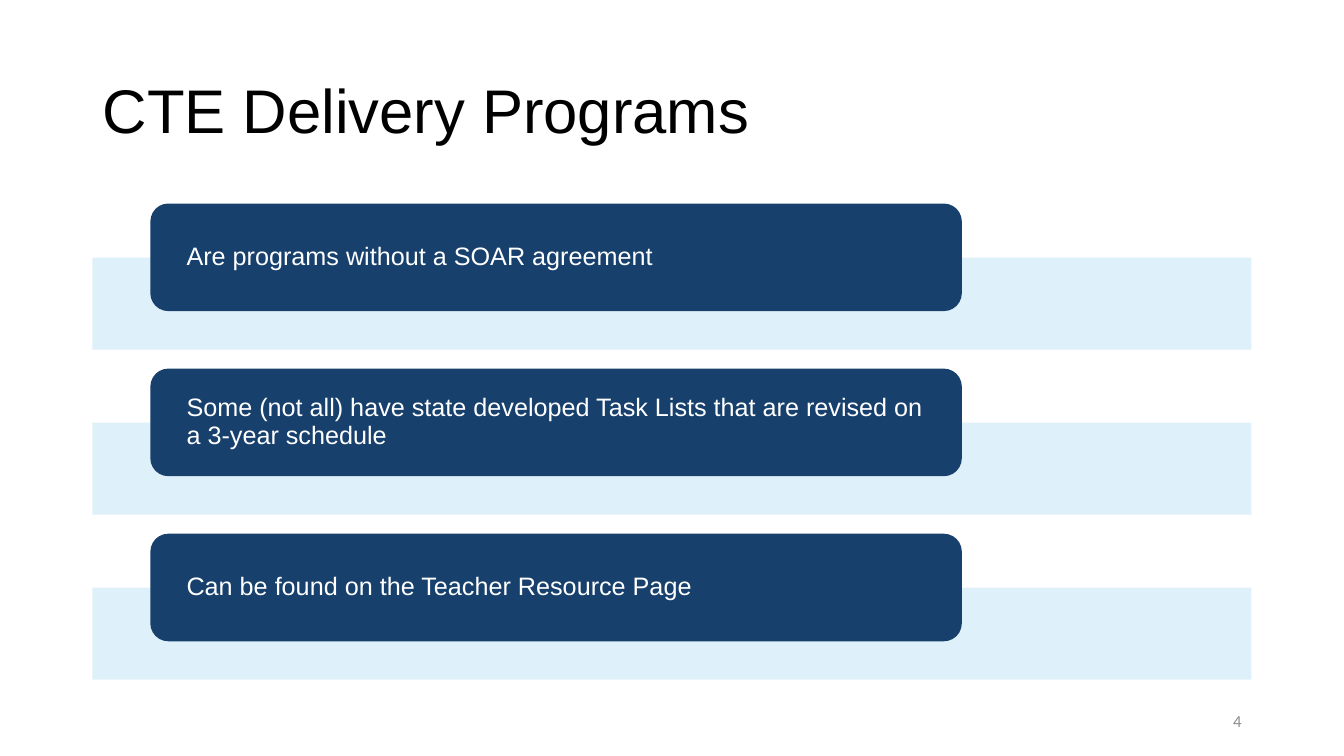
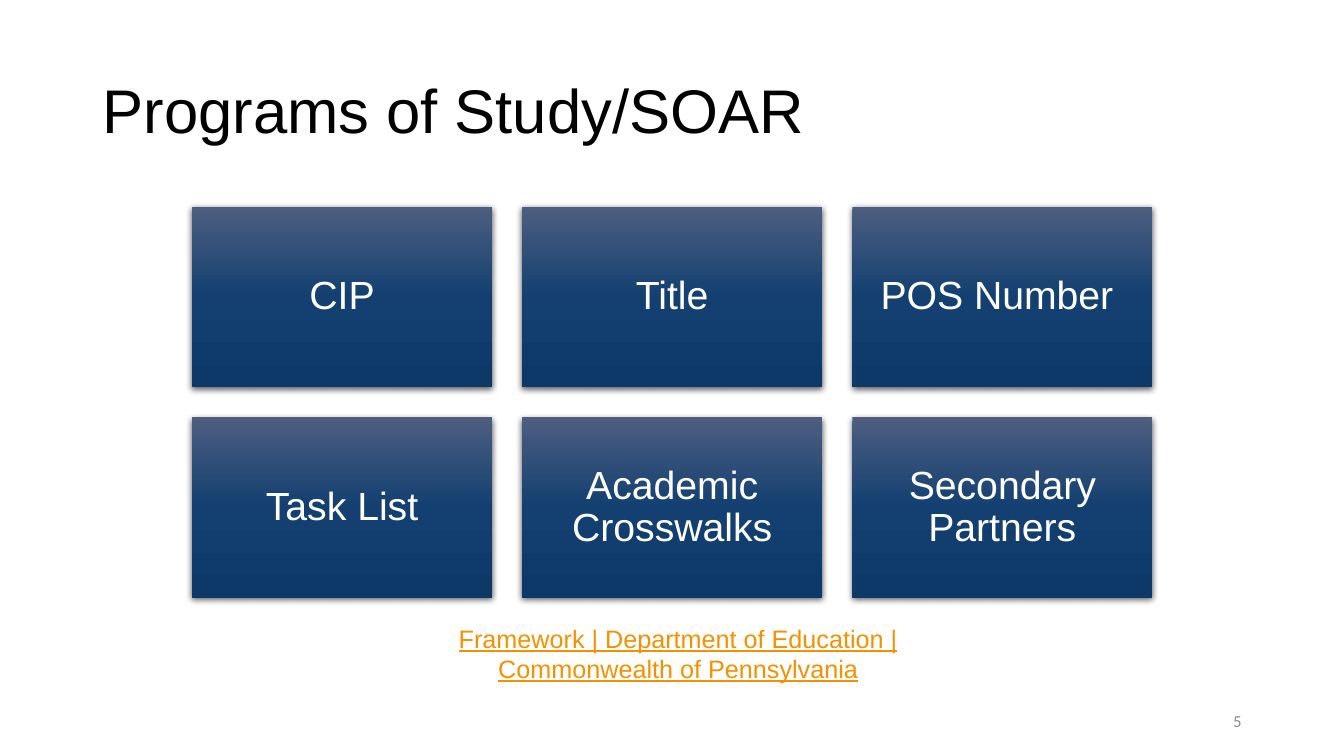
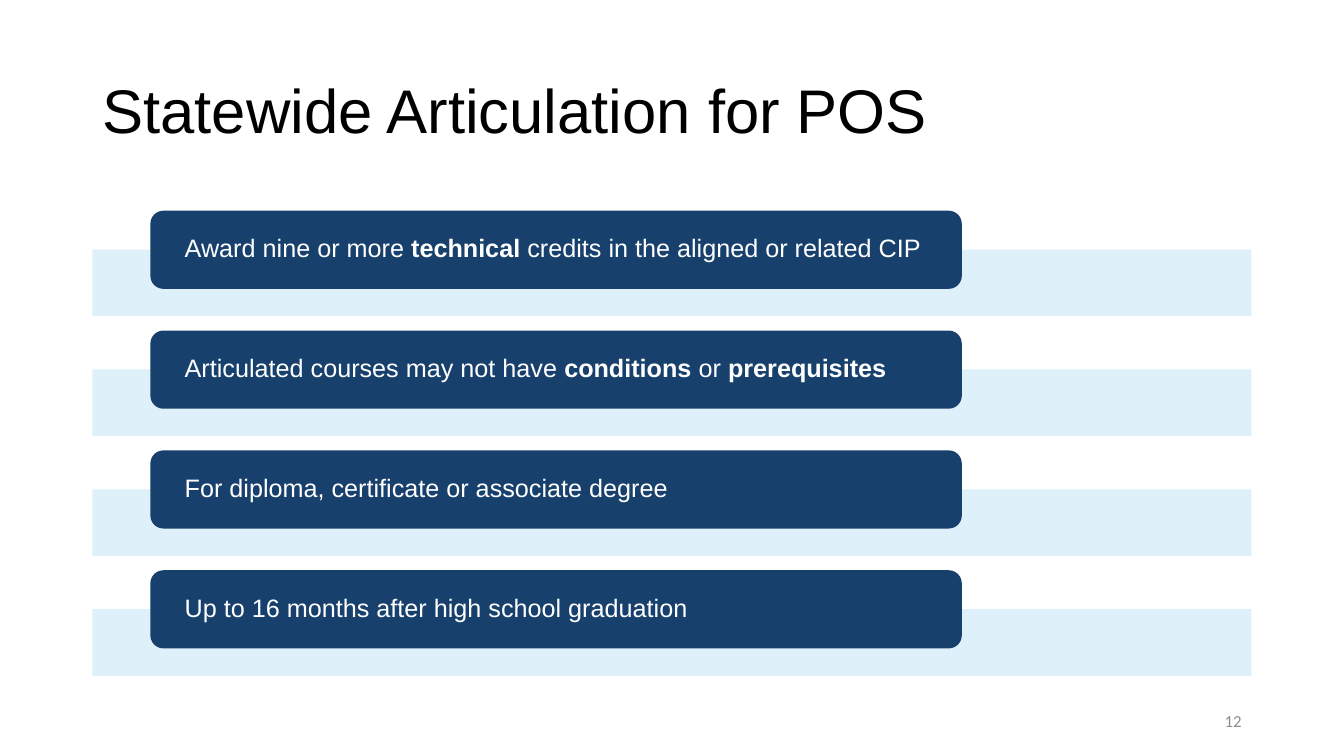
"""Build three slides on career and technical education programs."""

import dataclasses
import typing

import pptx
import pptx.dml.color
import pptx.enum.shapes
import pptx.enum.text
import pptx.oxml
import pptx.oxml.ns
import pptx.presentation
import pptx.shapes.autoshape
import pptx.slide
import pptx.text.text
import pptx.util

Cm = pptx.util.Cm
RGBColor = pptx.dml.color.RGBColor
Align = pptx.enum.text.PP_ALIGN
Anchor = pptx.enum.text.MSO_ANCHOR
ShapeKind = pptx.enum.shapes.MSO_SHAPE

BLACK = RGBColor(0x00, 0x00, 0x00)
WHITE = RGBColor(0xFF, 0xFF, 0xFF)
NAVY = RGBColor(0x17, 0x40, 0x6D)
PALE_BLUE = RGBColor(0xDB, 0xEF, 0xF9)
ORANGE = RGBColor(0xF4, 0x91, 0x00)
GRAY = RGBColor(0x8C, 0x8C, 0x8C)
TILE_STOPS = (
    (0, RGBColor(0x4D, 0x5E, 0x80)),
    (50, RGBColor(0x13, 0x40, 0x71)),
    (100, RGBColor(0x0D, 0x39, 0x69)),
)

CONTENT_LEFT = Cm(2.33)
CONTENT_WIDTH = Cm(29.21)
LABEL_LEFT = Cm(3.79)
LABEL_WIDTH = Cm(20.45)
TITLE_ONLY_LAYOUT = 5


class TextRun(typing.NamedTuple):
    """A piece of text with its weight."""

    text: str
    bold: bool = False


@dataclasses.dataclass(frozen=True)
class TextStyle:
    """Character and paragraph format of a text."""

    size: int
    color: RGBColor
    font: str = "Arial"
    align: Align = Align.LEFT
    line_spacing: float = 0.9
    underline: bool = False


@dataclasses.dataclass(frozen=True)
class BandLayout:
    """Vertical measures of a stack of labelled bands."""

    band_top: Cm
    band_height: Cm
    label_top: Cm
    label_height: Cm
    pitch: Cm
    inset: Cm


@dataclasses.dataclass(frozen=True)
class TileGrid:
    """Measures of a grid of equal tiles."""

    left: Cm
    top: Cm
    width: Cm
    height: Cm
    gap: Cm
    columns: int


TITLE_STYLE = TextStyle(44, BLACK)
LABEL_STYLE = TextStyle(18, WHITE)
TILE_STYLE = TextStyle(28, WHITE, align=Align.CENTER)
SOURCE_STYLE = TextStyle(18, ORANGE, align=Align.CENTER, line_spacing=1.0, underline=True)
NUMBER_STYLE = TextStyle(12, GRAY, font="Calibri", align=Align.RIGHT, line_spacing=1.0)

THREE_BANDS = BandLayout(Cm(6.49), Cm(2.32), Cm(5.13), Cm(2.71), Cm(4.16), Cm(0.78))
FOUR_BANDS = BandLayout(Cm(6.29), Cm(1.68), Cm(5.31), Cm(1.97), Cm(3.02), Cm(0.77))
TOPIC_GRID = TileGrid(Cm(4.84), Cm(5.22), Cm(7.56), Cm(4.54), Cm(0.76), 3)

DELIVERY_POINTS = (
    (TextRun("Are programs without a SOAR agreement"),),
    (TextRun("Some (not all) have state developed Task Lists that are revised on a 3-year schedule"),),
    (TextRun("Can be found on the Teacher Resource Page "),),
)
TOPICS = (
    "CIP",
    "Title",
    "POS Number ",
    "Task List",
    "Academic Crosswalks",
    "Secondary Partners",
)
ARTICULATION_POINTS = (
    (
        TextRun("Award nine or more "),
        TextRun("technical", True),
        TextRun(" credits in the aligned or related CIP"),
    ),
    (
        TextRun("Articulated courses may not have "),
        TextRun("conditions", True),
        TextRun(" or "),
        TextRun("prerequisites", True),
    ),
    (TextRun("For diploma, certificate or associate degree"),),
    (TextRun("Up to 16 months after high school graduation"),),
)


def write_text(
    frame: pptx.text.text.TextFrame,
    runs: typing.Iterable[TextRun],
    style: TextStyle,
    anchor: Anchor = Anchor.MIDDLE,
) -> None:
    """Write runs into the first paragraph of a text frame."""
    frame.word_wrap = True
    frame.auto_size = pptx.enum.text.MSO_AUTO_SIZE.NONE
    frame.vertical_anchor = anchor
    paragraph = frame.paragraphs[0]
    paragraph.alignment = style.align
    paragraph.line_spacing = style.line_spacing
    for text_run in runs:
        run = paragraph.add_run()
        run.text = text_run.text
        run.font.name = style.font
        run.font.size = pptx.util.Pt(style.size)
        run.font.bold = text_run.bold
        run.font.underline = style.underline
        run.font.color.rgb = style.color


def set_margins(frame: pptx.text.text.TextFrame, horizontal: Cm, vertical: Cm) -> None:
    """Set symmetric margins on a text frame."""
    frame.margin_left = frame.margin_right = horizontal
    frame.margin_top = frame.margin_bottom = vertical


def add_plain_shape(
    slide: pptx.slide.Slide, kind: ShapeKind, left: int, top: int, width: int, height: int
) -> pptx.shapes.autoshape.Shape:
    """Add a preset shape without line and shadow."""
    shape = slide.shapes.add_shape(kind, left, top, width, height)
    shape.shadow.inherit = False
    shape.line.fill.background()
    return shape


def add_titled_slide(
    presentation: pptx.presentation.Presentation, title: str, number: int
) -> pptx.slide.Slide:
    """Add a slide with its title and number."""
    slide = presentation.slides.add_slide(presentation.slide_layouts[TITLE_ONLY_LAYOUT])
    heading = slide.shapes.title
    heading.left, heading.top = CONTENT_LEFT, Cm(1.01)
    heading.width, heading.height = CONTENT_WIDTH, Cm(3.68)
    write_text(heading.text_frame, [TextRun(title)], TITLE_STYLE)
    number_box = slide.shapes.add_textbox(Cm(23.92), Cm(17.65), Cm(7.62), Cm(1.02))
    write_text(number_box.text_frame, [TextRun(str(number))], NUMBER_STYLE)
    return slide


def add_bands(
    slide: pptx.slide.Slide,
    layout: BandLayout,
    points: typing.Sequence[typing.Sequence[TextRun]],
) -> None:
    """Stack pale bands, each with a rounded label over it."""
    for index, runs in enumerate(points):
        offset = index * layout.pitch
        band = add_plain_shape(
            slide, ShapeKind.RECTANGLE,
            CONTENT_LEFT, layout.band_top + offset, CONTENT_WIDTH, layout.band_height,
        )
        band.fill.solid()
        band.fill.fore_color.rgb = PALE_BLUE
        color = band.element.spPr.find(".//" + pptx.oxml.ns.qn("a:srgbClr"))
        color.append(pptx.oxml.parse_xml(f'<a:alpha {pptx.oxml.ns.nsdecls("a")} val="90000"/>'))
        label = add_plain_shape(
            slide, ShapeKind.ROUNDED_RECTANGLE,
            LABEL_LEFT, layout.label_top + offset, LABEL_WIDTH, layout.label_height,
        )
        label.fill.solid()
        label.fill.fore_color.rgb = NAVY
        set_margins(label.text_frame, layout.inset, Cm(0))
        write_text(label.text_frame, runs, LABEL_STYLE)


def shade_tile(tile: pptx.shapes.autoshape.Shape) -> None:
    """Give a tile its vertical gradient and soft shadow."""
    namespace = pptx.oxml.ns.nsdecls("a")
    stops = "".join(
        f'<a:gs pos="{position * 1000}"><a:srgbClr val="{color}"/></a:gs>'
        for position, color in TILE_STOPS
    )
    gradient = pptx.oxml.parse_xml(
        f'<a:gradFill {namespace} rotWithShape="1"><a:gsLst>{stops}</a:gsLst>'
        '<a:lin ang="5400000" scaled="0"/></a:gradFill>'
    )
    shadow = pptx.oxml.parse_xml(
        f'<a:outerShdw {namespace} blurRad="57150" dist="19050" dir="5400000" '
        'algn="ctr" rotWithShape="0"><a:srgbClr val="000000">'
        '<a:alpha val="63000"/></a:srgbClr></a:outerShdw>'
    )
    properties = tile.element.spPr
    properties.find(pptx.oxml.ns.qn("a:prstGeom")).addnext(gradient)
    properties.find(pptx.oxml.ns.qn("a:effectLst")).append(shadow)


def add_tiles(slide: pptx.slide.Slide, grid: TileGrid, names: typing.Sequence[str]) -> None:
    """Lay out named tiles row by row."""
    for index, name in enumerate(names):
        row, column = divmod(index, grid.columns)
        tile = add_plain_shape(
            slide, ShapeKind.RECTANGLE,
            grid.left + column * (grid.width + grid.gap),
            grid.top + row * (grid.height + grid.gap),
            grid.width, grid.height,
        )
        shade_tile(tile)
        set_margins(tile.text_frame, Cm(0.3), Cm(0.3))
        write_text(tile.text_frame, [TextRun(name)], TILE_STYLE)


def add_source(slide: pptx.slide.Slide, text: str) -> None:
    """Add the underlined source line below the tiles."""
    frame = slide.shapes.add_textbox(Cm(8.86), Cm(15.57), Cm(16.31), Cm(1.8)).text_frame
    frame.margin_left, frame.margin_right = Cm(0.45), Cm(0.3)
    write_text(frame, [TextRun(text)], SOURCE_STYLE, Anchor.TOP)


def main() -> None:
    """Build and save the presentation."""
    presentation = pptx.Presentation()
    presentation.slide_width, presentation.slide_height = Cm(33.87), Cm(19.05)

    delivery = add_titled_slide(presentation, "CTE Delivery Programs ", 4)
    add_bands(delivery, THREE_BANDS, DELIVERY_POINTS)

    study = add_titled_slide(presentation, "Programs of Study/SOAR", 5)
    add_tiles(study, TOPIC_GRID, TOPICS)
    add_source(study, "Framework | Department of Education | Commonwealth of Pennsylvania")

    articulation = add_titled_slide(presentation, "Statewide Articulation for POS", 12)
    add_bands(articulation, FOUR_BANDS, ARTICULATION_POINTS)

    presentation.save("out.pptx")


if __name__ == "__main__":
    main()
